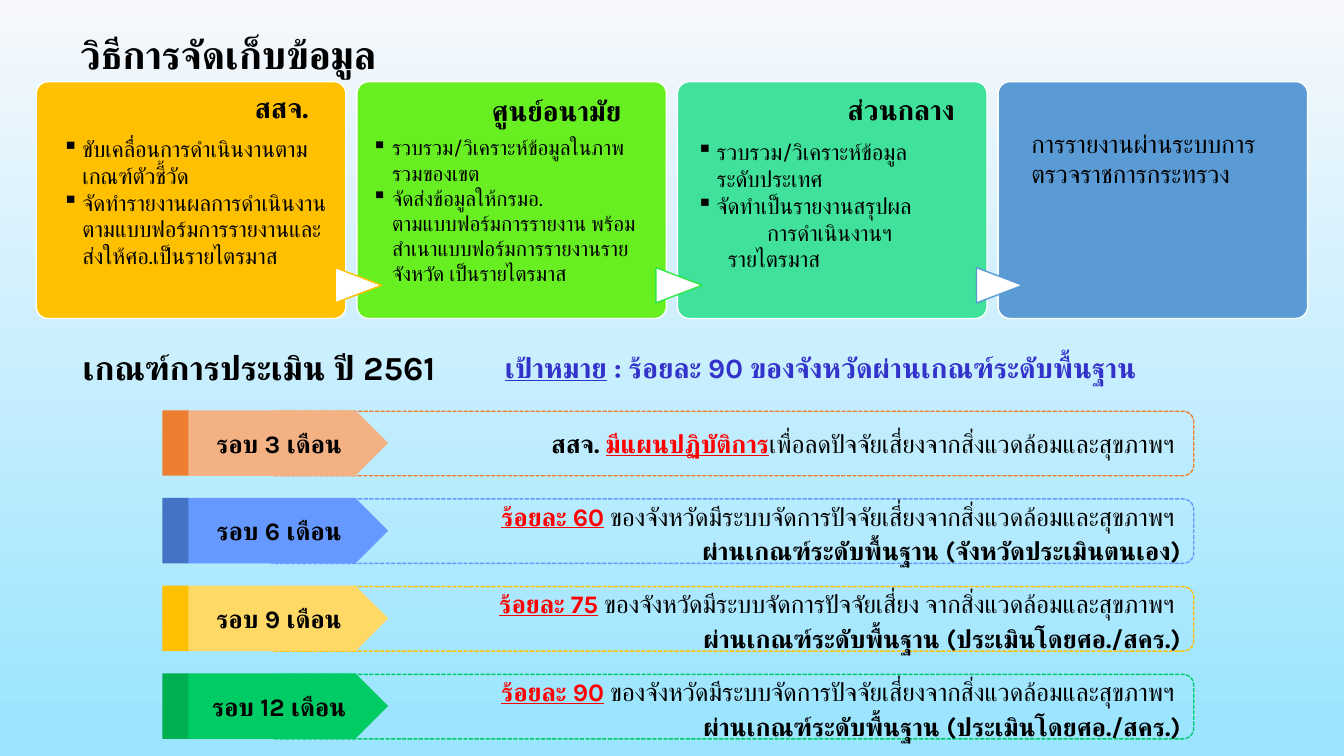
from dataclasses import dataclass

from lxml.etree import SubElement
from pptx import Presentation
from pptx.dml.color import RGBColor
from pptx.enum.dml import MSO_LINE
from pptx.enum.shapes import MSO_SHAPE
from pptx.enum.text import MSO_ANCHOR, MSO_AUTO_SIZE, PP_ALIGN
from pptx.oxml import parse_xml
from pptx.oxml.ns import nsdecls, qn
from pptx.shapes.autoshape import Shape
from pptx.slide import Slide
from pptx.text.text import TextFrame
from pptx.util import Inches, Pt

FONT = "Karla"
BLACK = RGBColor(0x00, 0x00, 0x00)
WHITE = RGBColor(0xFF, 0xFF, 0xFF)
RED = RGBColor(0xFF, 0x00, 0x00)
INDIGO = RGBColor(0x33, 0x33, 0xCC)
SKY_TOP = RGBColor(0xF6, 0xF8, 0xFC)
SKY_BOTTOM = RGBColor(0x9B, 0xE5, 0xFF)
AMBER = RGBColor(0xFF, 0xC0, 0x00)
LIME = RGBColor(0x67, 0xEF, 0x21)
MINT = RGBColor(0x3F, 0xE1, 0x9B)
BRIGHT_GREEN = RGBColor(0x30, 0xE8, 0x45)
STEEL = RGBColor(0x5B, 0x9B, 0xD5)
ORANGE = RGBColor(0xED, 0x7D, 0x31)
PEACH = RGBColor(0xF4, 0xB1, 0x83)
BLUE = RGBColor(0x44, 0x72, 0xC4)
PERIWINKLE = RGBColor(0x66, 0x99, 0xFF)
YELLOW = RGBColor(0xFF, 0xD9, 0x66)
GREEN = RGBColor(0x00, 0xB0, 0x50)
EMERALD = RGBColor(0x00, 0xCC, 0x66)


@dataclass(frozen=True)
class Box:
    left: float
    top: float
    width: float
    height: float

    def lengths(self) -> list[int]:
        return [Inches(v) for v in (self.left, self.top, self.width, self.height)]


@dataclass(frozen=True)
class Span:
    text: str
    bold: bool | None = None
    color: RGBColor | None = None
    underline: bool | None = None


@dataclass(frozen=True)
class Para:
    spans: list[Span]
    size: float
    bold: bool = False
    color: RGBColor = BLACK
    align: PP_ALIGN = PP_ALIGN.LEFT
    spacing: float | None = None
    indent: float = 0
    bullet: bool = False


@dataclass(frozen=True)
class Note:
    box: Box
    paras: list[Para]
    wrap: bool = True


@dataclass(frozen=True)
class Round:
    label: str
    bar: RGBColor
    tag: RGBColor
    outline: RGBColor
    paras: list[Para]


def line(text: str, size: float, **options) -> Para:
    return Para([Span(text)], size, **options)


def item(text: str, size: float, indent: float = 0.2, bullet: bool = True) -> Para:
    return line(text, size, indent=indent, bullet=bullet)


def share(percent: int, scope: str, assessor: str) -> list[Para]:
    layout = {"align": PP_ALIGN.RIGHT, "spacing": 1.15}
    target = Span(f"ร้อยละ {percent}", True, RED, True)
    return [
        Para([target, Span(f" {scope}")], 18, **layout),
        line(f"ผ่านเกณฑ์ระดับพื้นฐาน ({assessor})", 18, bold=True, **layout),
    ]


def write(frame: TextFrame, paras: list[Para]) -> None:
    for index, para in enumerate(paras):
        paragraph = frame.paragraphs[0] if index == 0 else frame.add_paragraph()
        paragraph.alignment = para.align
        if para.spacing:
            paragraph.line_spacing = para.spacing
        font = paragraph.font
        font.name, font.size, font.bold = FONT, Pt(para.size), para.bold
        font.color.rgb = para.color
        # Thai letters take the complex-script typeface
        properties = paragraph._p.get_or_add_pPr()
        SubElement(properties.find(qn("a:defRPr")), qn("a:cs"), typeface=FONT)
        if para.indent:
            properties.set("marL", str(Inches(para.indent)))
            properties.set("indent", str(Inches(-0.2 if para.bullet else 0)))
        if para.bullet:
            properties.insert(0, parse_xml(f'<a:buChar {nsdecls("a")} char="▪"/>'))
        for span in para.spans:
            run = paragraph.add_run()
            run.text = span.text
            if span.bold is not None:
                run.font.bold = span.bold
            if span.color is not None:
                run.font.color.rgb = span.color
            if span.underline is not None:
                run.font.underline = span.underline


def draw(slide: Slide, kind: MSO_SHAPE, box: Box, fill: RGBColor | None = None,
         outline: RGBColor | None = None) -> Shape:
    shape = slide.shapes.add_shape(kind, *box.lengths())
    shape.shadow.inherit = False
    if fill is None:
        shape.fill.background()
    else:
        shape.fill.solid()
        shape.fill.fore_color.rgb = fill
    if outline is None:
        shape.line.fill.background()
    else:
        shape.line.color.rgb = outline
        shape.line.width = Pt(1)
    return shape


def draw_note(slide: Slide, note: Note) -> None:
    frame = slide.shapes.add_textbox(*note.box.lengths()).text_frame
    frame.word_wrap = note.wrap
    frame.auto_size = MSO_AUTO_SIZE.SHAPE_TO_FIT_TEXT
    write(frame, note.paras)


def draw_round(slide: Slide, entry: Round, top: float) -> None:
    criterion = draw(slide, MSO_SHAPE.ROUNDED_RECTANGLE,
                     Box(2.62, top + 0.01, 9.22, 0.64), outline=entry.outline)
    criterion.line.dash_style = MSO_LINE.SQUARE_DOT
    criterion.text_frame.vertical_anchor = MSO_ANCHOR.MIDDLE
    write(criterion.text_frame, entry.paras)
    tag = draw(slide, MSO_SHAPE.PENTAGON, Box(1.85, top, 2, 0.65), entry.tag)
    tag.text_frame.vertical_anchor = MSO_ANCHOR.MIDDLE
    write(tag.text_frame, [line(entry.label, 18, bold=True, align=PP_ALIGN.CENTER)])
    draw(slide, MSO_SHAPE.RECTANGLE, Box(1.61, top, 0.26, 0.65), entry.bar)


CARD_LEFT, CARD_PITCH = 0.36, 3.18
CARD_FILLS = [AMBER, LIME, MINT, STEEL]
ARROW_OUTLINES = [AMBER, BRIGHT_GREEN, STEEL]
CARD_NOTES = [
    Note(Box(2.43, 0.85, 0.82, 0.44), [line("สสจ.", 20, bold=True)], False),
    Note(Box(4.78, 0.88, 1.66, 0.44), [line("ศูนย์อนามัย", 20, bold=True)], False),
    Note(Box(8.31, 0.87, 1.4, 0.44), [line("ส่วนกลาง", 20, bold=True)], False),
    Note(Box(0.52, 1.29, 2.93, 1.72), [
        item("ขับเคลื่อนการดำเนินงานตามเกณฑ์ตัวชี้วัด", 16),
        item("จัดทำรายงานผลการดำเนินงานตามแบบฟอร์มการรายงานและส่งให้ศอ.เป็นรายไตรมาส", 16)]),
    Note(Box(3.59, 1.29, 2.93, 1.87), [
        item("รวบรวม/วิเคราะห์ข้อมูลในภาพรวมของเขต", 15),
        item("จัดส่งข้อมูลให้กรมอ.", 15),
        item("ตามแบบฟอร์มการรายงาน พร้อมสำเนาแบบฟอร์มการรายงานรายจังหวัด เป็นรายไตรมาส",
             15, bullet=False)]),
    Note(Box(6.81, 1.32, 2.68, 1.45), [
        item("รวบรวม/วิเคราะห์ข้อมูลระดับประเทศ", 16),
        item("จัดทำเป็นรายงานสรุปผล", 16),
        item("การดำเนินงานฯ", 16, 0.7, False),
        item("รายไตรมาส", 16, 0.31, False)]),
    Note(Box(10.13, 1.22, 2.68, 1.01),
         [line("การรายงานผ่านระบบการตรวจราชการกระทรวง", 18)]),
]
GOAL = Note(Box(4.91, 3.43, 7.59, 0.44), [
    Para([Span("เป้าหมาย", underline=True),
          Span(" : ร้อยละ 90 ของจังหวัดผ่านเกณฑ์ระดับพื้นฐาน")], 20, True, INDIGO)])
SCOPE = "ของจังหวัดมีระบบจัดการปัจจัยเสี่ยงจากสิ่งแวดล้อมและสุขภาพฯ "
SCOPE_SPACED = SCOPE.replace("เสี่ยง", "เสี่ยง ")
PLAN = Para([Span("สสจ. ", True), Span("มีแผนปฏิบัติการ", True, RED, True),
             Span("เพื่อลดปัจจัยเสี่ยงจากสิ่งแวดล้อมและสุขภาพฯ ")],
            18, align=PP_ALIGN.RIGHT)
ROUNDS = [
    Round("รอบ 3 เดือน", ORANGE, PEACH, ORANGE, [PLAN]),
    Round("รอบ 6 เดือน", BLUE, PERIWINKLE, PERIWINKLE,
          share(60, SCOPE, "จังหวัดประเมินตนเอง")),
    Round("รอบ 9 เดือน", AMBER, YELLOW, AMBER,
          share(75, SCOPE_SPACED, "ประเมินโดยศอ./สคร.")),
    Round("รอบ 12 เดือน", GREEN, EMERALD, EMERALD,
          share(90, SCOPE, "ประเมินโดยศอ./สคร.")),
]


def main() -> None:
    deck = Presentation()
    deck.slide_width, deck.slide_height = Inches(13.33), Inches(7.5)
    slide = deck.slides.add_slide(deck.slide_layouts[5])

    # Sky gradient, running downwards
    sky = slide.background.fill
    sky.gradient()
    sky.gradient_angle = 270
    for stop, color, position in zip(sky.gradient_stops, (SKY_TOP, SKY_BOTTOM), (0, 0.97)):
        stop.color.rgb, stop.position = color, position

    # Title
    title = slide.shapes.title
    title.left, title.top, title.width, title.height = Box(0.36, 0.22, 3.81, 0.62).lengths()
    title.text_frame.vertical_anchor = MSO_ANCHOR.MIDDLE
    write(title.text_frame,
          [line("วิธีการจัดเก็บข้อมูล", 28, bold=True, align=PP_ALIGN.CENTER)])

    # Collection steps and the arrows between them
    for index, fill in enumerate(CARD_FILLS):
        card = draw(slide, MSO_SHAPE.ROUNDED_RECTANGLE,
                    Box(CARD_LEFT + index * CARD_PITCH, 0.81, 3.07, 2.35), fill, WHITE)
        card.adjustments[0] = 0.05
    for index, outline in enumerate(ARROW_OUTLINES):
        arrow = draw(slide, MSO_SHAPE.FLOWCHART_EXTRACT,
                     Box(3.38 + index * CARD_PITCH, 2.6, 0.35, 0.46), WHITE, outline)
        arrow.rotation = 90
    for note in CARD_NOTES:
        draw_note(slide, note)

    # Assessment criteria
    heading = draw(slide, MSO_SHAPE.ROUNDED_RECTANGLE, Box(0.28, 3.37, 4.58, 0.54))
    heading.text_frame.vertical_anchor = MSO_ANCHOR.TOP
    write(heading.text_frame,
          [line("เกณฑ์การประเมิน ปี 2561", 24, bold=True, align=PP_ALIGN.CENTER)])
    draw_note(slide, GOAL)
    for index, entry in enumerate(ROUNDS):
        draw_round(slide, entry, 4.07 + index * 0.87)

    deck.save("out.pptx")


if __name__ == "__main__":
    main()
